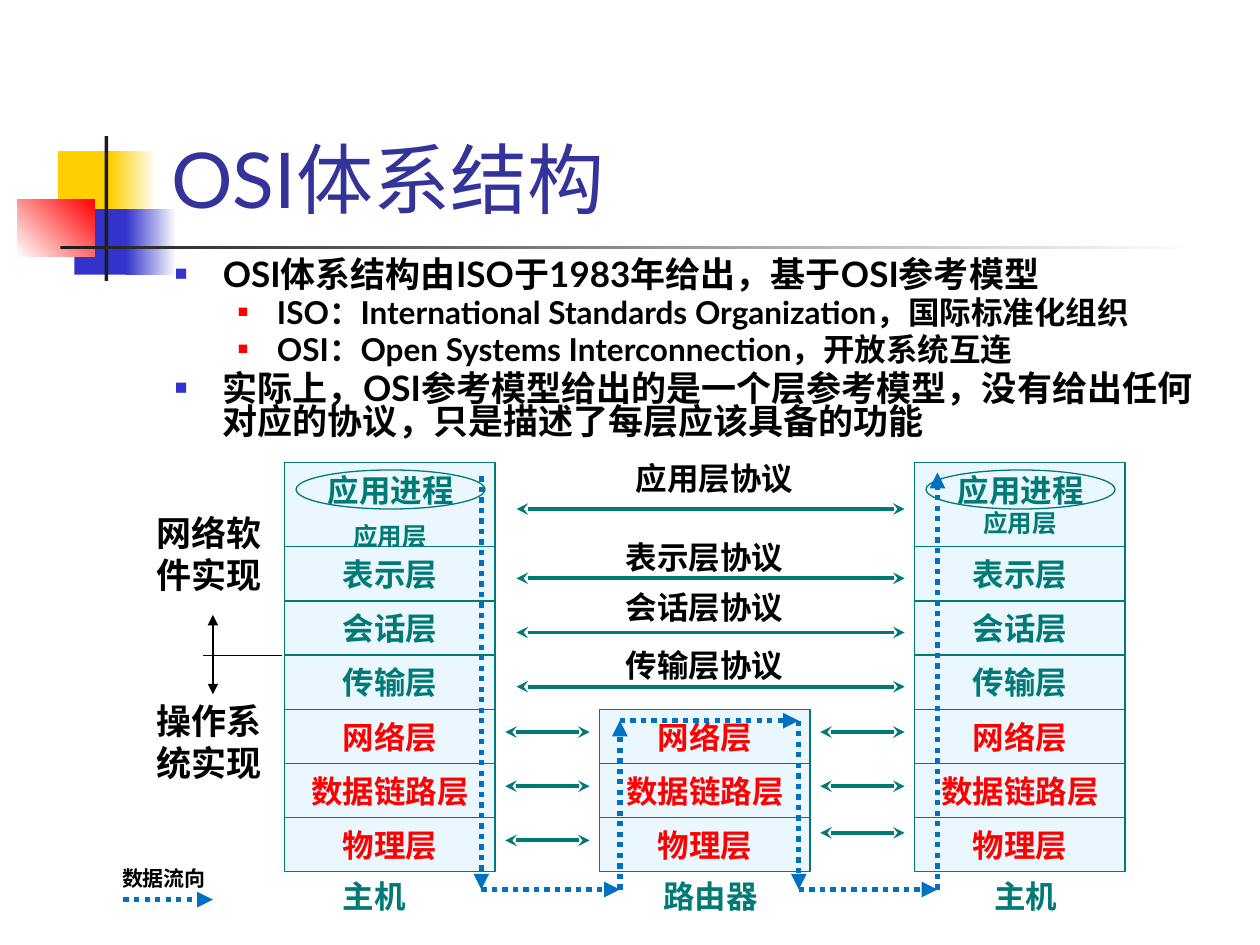
import itertools

import pptx
import pptx.dml.color
import pptx.enum.dml
import pptx.enum.shapes
import pptx.enum.text
import pptx.oxml
import pptx.oxml.ns
import pptx.util

Inches = pptx.util.Inches
Pt = pptx.util.Pt
KIND = pptx.enum.shapes.MSO_SHAPE
ALIGN = pptx.enum.text.PP_ALIGN
ANCHOR = pptx.enum.text.MSO_ANCHOR

HUES = {
    "gold": "FFCF01", "blue": "3333CC", "red": "FF0000", "white": "FFFFFF",
    "dark": "1C1C1C", "title": "333399", "black": "000000",
    "teal": "007A77", "pale": "EBF7FF", "flow": "0070C0",
}

# Layer stack geometry
WIDE, HIGH, TOP = 1.67, 0.43, 4.34
UPPER = ["表示层", "会话层", "传输层"]
LOWER = ["网络层", "数据链路层", "物理层"]
HOSTS = [(2.26, 0.49), (7.26, 0.29)]  # left edge, inset above 应用层
ROUTER = 4.76


def rgb(hue):
    return pptx.dml.color.RGBColor.from_string(HUES[hue])


def apply(target, values):
    for key, value in values.items():
        setattr(target, key, value)


def write(para, text, size, hue, font="Lato", bold=True):
    run = para.add_run()
    run.text = text
    apply(run.font, {"name": font, "size": Pt(size), "bold": bold})
    run.font.color.rgb = rgb(hue)


def label(slide, box, text, size, hue="black", font="Lato", bold=True,
          align=ALIGN.CENTER, anchor=ANCHOR.TOP):
    frame = slide.shapes.add_textbox(*map(Inches, box)).text_frame
    apply(frame, {"word_wrap": True, "vertical_anchor": anchor})
    para = frame.paragraphs[0]
    para.alignment = align
    write(para, text, size, hue, font, bold)


def block(slide, box, hue, fade=None, angle=0):
    shape = slide.shapes.add_shape(KIND.RECTANGLE, *map(Inches, box))
    shape.shadow.inherit = False
    shape.line.fill.background()
    if fade:
        shape.fill.gradient()
        shape.fill.gradient_angle = angle
        for stop, name in zip(shape.fill.gradient_stops, (hue, fade)):
            stop.color.rgb = rgb(name)
    else:
        shape.fill.solid()
        shape.fill.fore_color.rgb = rgb(hue)


def layer(slide, box, text, hue="teal", size=18, kind=KIND.RECTANGLE, inset=None):
    shape = slide.shapes.add_shape(kind, *map(Inches, box))
    shape.shadow.inherit = False
    shape.fill.solid()
    shape.fill.fore_color.rgb = rgb("pale")
    shape.line.color.rgb = rgb("teal")
    shape.line.width = Pt(0.75)
    frame = shape.text_frame
    apply(frame, {"word_wrap": False, "vertical_anchor": ANCHOR.MIDDLE})
    if inset is not None:
        apply(frame, {"margin_top": Inches(inset), "margin_bottom": 0})
    para = frame.paragraphs[0]
    para.alignment = ALIGN.CENTER
    write(para, text, size, hue, "Arial")


def link(slide, start, end, hue, width, head=None, tail=None, dash=None):
    line = slide.shapes.add_connector(
        pptx.enum.shapes.MSO_CONNECTOR.STRAIGHT, *map(Inches, start + end))
    line.line.color.rgb = rgb(hue)
    line.line.width = Pt(width)
    if dash:
        line.line.dash_style = dash
    props = line.line._get_or_add_ln()
    for tag, tip in (("a:headEnd", head), ("a:tailEnd", tail)):
        if tip:
            part = pptx.oxml.xmlchemy.OxmlElement(tag)
            part.set("type", tip)
            props.append(part)
    props.getparent().append(pptx.oxml.xmlchemy.OxmlElement("a:effectLst"))


def both(slide, left, right, y):
    link(slide, (left, y), (right, y), "teal", 2.25, "stealth", "stealth")


def flow(slide, points):
    for start, end in itertools.pairwise(points):
        link(slide, start, end, "flow", 3, tail="triangle",
             dash=pptx.enum.dml.MSO_LINE.ROUND_DOT)


def bullet(para, level):
    left, hang, hue, scale = [(0.38, 0.38, "blue", 60), (0.81, 0.31, "red", 55)][level]
    props = para._p.get_or_add_pPr()
    props.set("marL", str(Inches(left)))
    props.set("indent", str(-Inches(hang)))
    space = pptx.oxml.ns.nsdecls("a")
    for xml in (
        f'<a:buClr {space}><a:srgbClr val="{HUES[hue]}"/></a:buClr>',
        f'<a:buSzPct {space} val="{scale * 1000}"/>',
        f'<a:buFont {space} typeface="Arial"/>',
        f'<a:buChar {space} char="■"/>',
    ):
        props.append(pptx.oxml.parse_xml(xml))


def body(slide, box, items):
    frame = slide.shapes.add_textbox(*map(Inches, box)).text_frame
    frame.word_wrap = True
    for i, (level, text) in enumerate(items):
        para = frame.add_paragraph() if i else frame.paragraphs[0]
        size = 18 if level else 20
        bullet(para, level)
        apply(para, {"level": level, "line_spacing": 0.8,
                     "space_before": Pt(size * 0.2 if i else 0)})
        write(para, text, size, "black")


def stack(slide, left, names, first, hue):
    for i, name in enumerate(names, first):
        layer(slide, (left, TOP + i * HIGH, WIDE, HIGH), name, hue)


def main():
    deck = pptx.Presentation()
    apply(deck, {"slide_width": Inches(10), "slide_height": Inches(7.5)})
    slide = deck.slides.add_slide(deck.slide_layouts[6])

    # Corner ornament and rule
    block(slide, (0.46, 1.2, 0.48, 0.52), "gold")
    block(slide, (0.88, 1.2, 0.36, 0.52), "gold", "white")
    block(slide, (0.59, 1.66, 0.46, 0.52), "blue")
    block(slide, (1, 1.66, 0.4, 0.52), "blue", "white")
    block(slide, (0.14, 1.58, 0.61, 0.46), "white", "red", 45)
    block(slide, (0.83, 1.08, 0.03, 1.15), "dark")
    block(slide, (0.48, 1.95, 9, 0.03), "dark", "white")

    # Title and bullets
    label(slide, (1.26, 0.23, 8.52, 1.6), "OSI体系结构", 44, "title",
          bold=False, align=ALIGN.LEFT, anchor=ANCHOR.BOTTOM)
    body(slide, (1.29, 2.02, 8.5, 1.94), [
        (0, "OSI体系结构由ISO于1983年给出，基于OSI参考模型"),
        (1, "ISO：International Standards Organization，国际标准化组织"),
        (1, "OSI：Open Systems Interconnection，开放系统互连"),
        (0, "实际上，OSI参考模型给出的是一个层参考模型，没有给出任何"
            "对应的协议，只是描述了每层应该具备的功能"),
    ])

    # Hosts and router
    for left, inset in HOSTS:
        layer(slide, (left, 3.67, WIDE, 0.67), "应用层", size=14, inset=inset)
        layer(slide, (left + 0.09, 3.73, 1.5, 0.31), "应用进程", kind=KIND.OVAL)
        stack(slide, left, UPPER, 0, "teal")
        stack(slide, left, LOWER, 3, "red")
    stack(slide, ROUTER, LOWER, 3, "red")
    for left, name in ((1.93, "主机"), (4.6, "路由器"), (7.1, "主机")):
        label(slide, (left, 6.91, 2.08, 0.4), name, 18, "teal", "Arial")

    # Protocols between peers
    for y in (4.04, 4.59, 5.02, 5.45):
        both(slide, 4.1, 7.18, y)
    for left, rows in ((4.01, (5.81, 6.24, 6.67)), (6.51, (5.81, 6.24, 6.61))):
        for y in rows:
            both(slide, left, left + 0.67, y)
    for left, top, name in ((4.45, 3.59, "应用层"), (4.37, 4.22, "表示层"),
                            (4.37, 4.62, "会话层"), (4.37, 5.08, "传输层")):
        label(slide, (left, top, 2.44, 0.4), name + "协议", 18)

    # Software and system split
    link(slide, (1.61, 5.2), (2.24, 5.2), "black", 0.75)
    for y in (4.88, 5.51):
        link(slide, (1.69, 5.2), (1.69, y), "black", 0.75, tail="triangle")
    for top, name in ((4.01, "网络软件实现"), (5.5, "操作系统实现")):
        label(slide, (1.14, top, 1.26, 0.77), name, 20, align=ALIGN.LEFT)

    # Data flow and its key
    flow(slide, [(3.82, 3.78), (3.82, 7.06), (4.92, 7.06), (4.92, 5.72),
                 (6.34, 5.72), (6.34, 7.06), (7.44, 7.06), (7.44, 3.75)])
    flow(slide, [(0.98, 7.14), (1.69, 7.14)])
    label(slide, (0.87, 6.82, 0.91, 0.3), "数据流向", 12, align=ALIGN.LEFT)

    deck.save("out.pptx")


if __name__ == "__main__":
    main()
